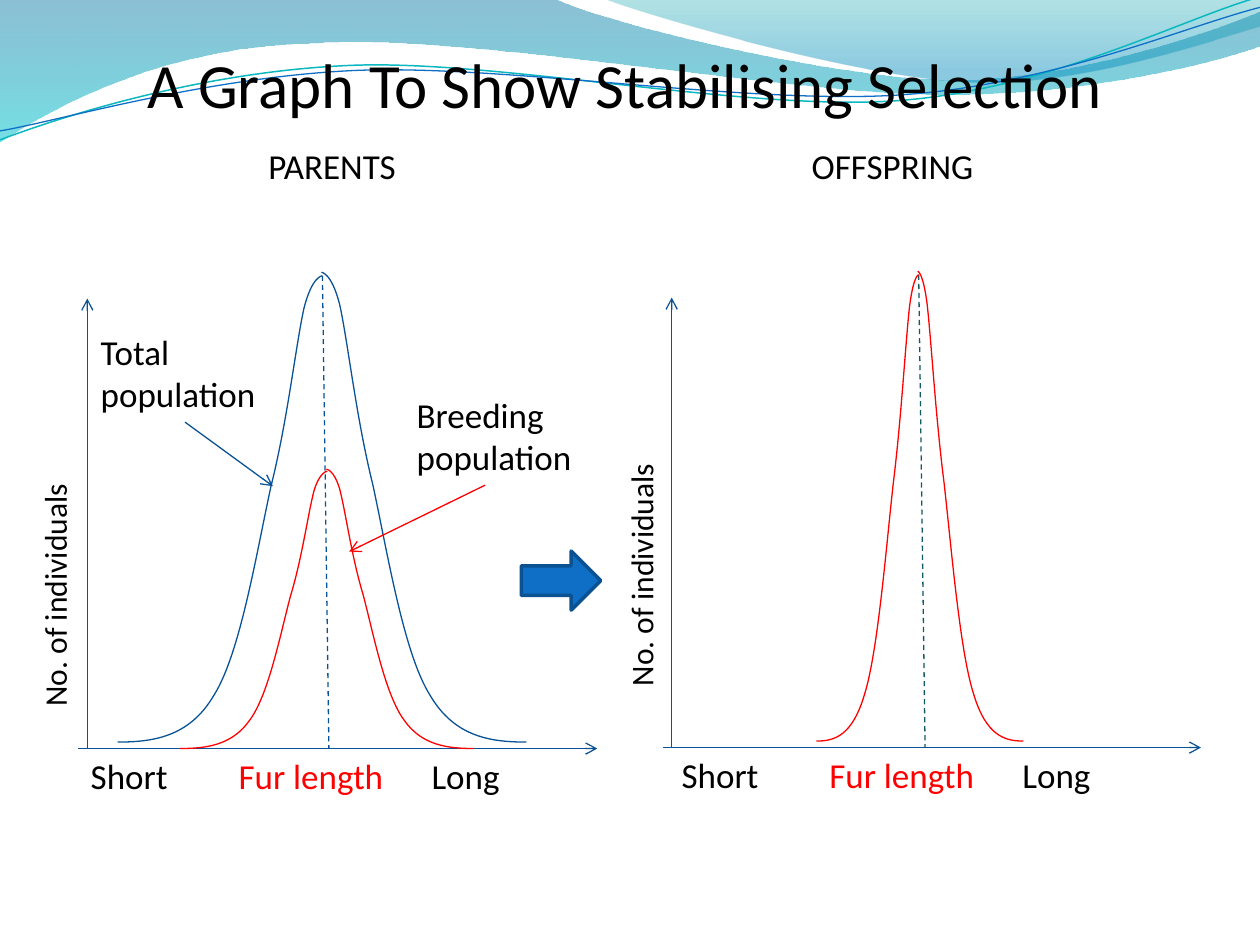
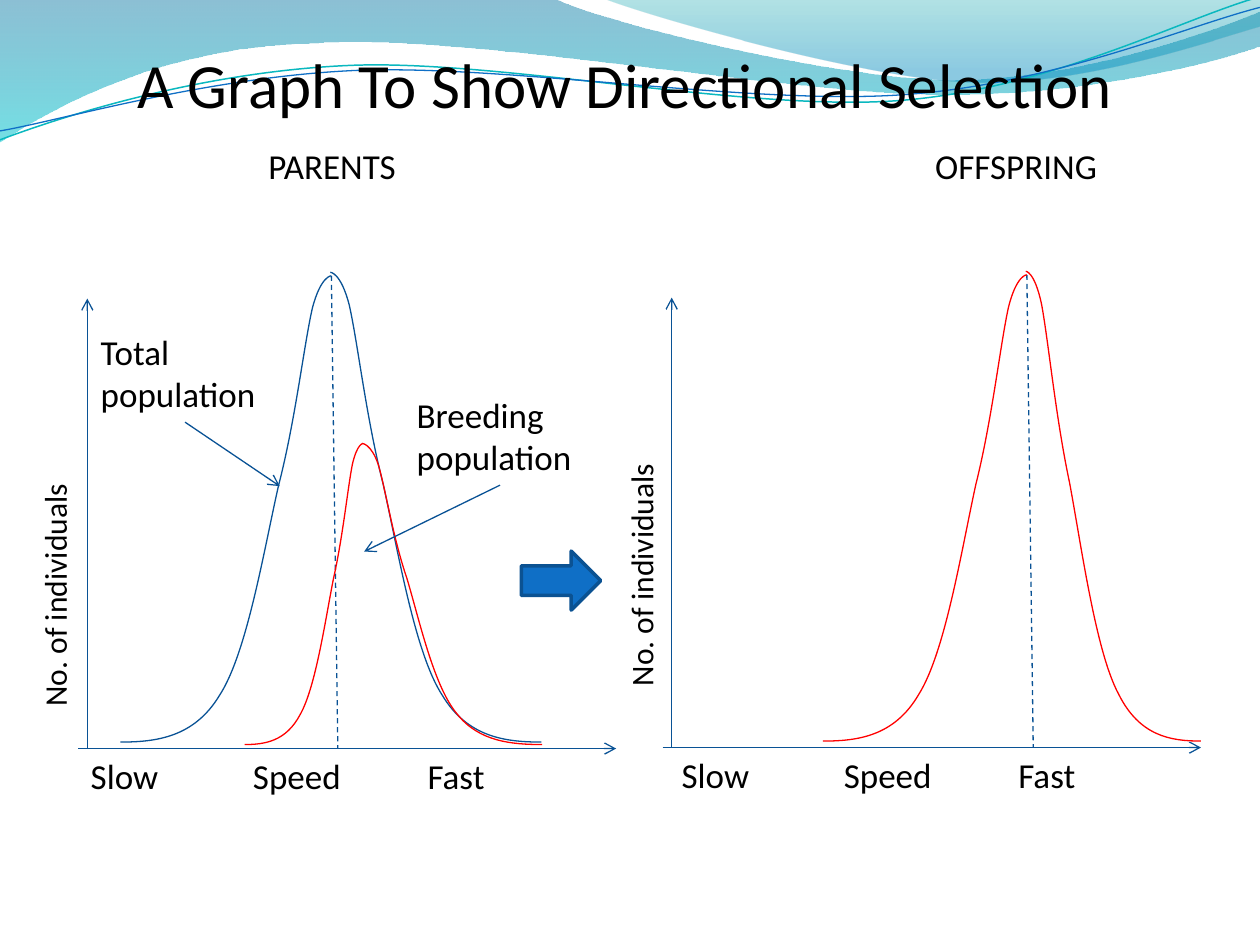
import lxml.etree
import pptx
import pptx.dml.color
import pptx.enum.dml
import pptx.enum.shapes
import pptx.enum.text
import pptx.oxml.ns
import pptx.util

FONT = "Calibri"
BLACK, RED, NAVY, BLUE = "000000", "FF0000", "095295", "0F6FC6"
THIN = 0.75
BELL = [
    [(0.17, 0), (0.35, 0.01), (0.47, 0.1)],
    [(0.6, 0.19), (0.68, 0.41), (0.75, 0.55)],
    [(0.83, 0.69), (0.87, 0.85), (0.91, 0.93)],
    [(0.95, 1), (1, 1), (1, 1)],
]
BANDS = [
    ((0, 0), [
        [(11.18, -0.03)],
        [(12.09, 0.43), (16.87, 1.6), (19.25, 1.6)],
        [(21.67, 1.6), (24.33, 0.66), (25.4, 0.23)],
        [(25.43, 0.91)],
        [(24.97, 1.12), (22.1, 1.93), (18.95, 1.9)],
        [(15.8, 1.9), (9.7, 0.71), (6.53, 0.86)],
        [(3.28, 0.91), (1.17, 2.11), (-0.03, 2.87)],
    ], [(0, "0074A1", 45), (1, "00C6CF", 55)]),
    ((12.17, -0.03), [
        [(12.93, 0.28), (17.32, 1.57), (19.53, 1.65)],
        [(21.74, 1.75), (24.41, 0.81), (25.4, 0.53)],
        [(25.4, 0)],
    ], [(0, "00A1A9", 30), (0.8, "008BBF", 45)]),
]
WAVES = [
    ((0, 2.82), [
        [(1.22, 2.36), (4.01, 1.45), (7.04, 1.32)],
        [(10.03, 1.19), (15.06, 2.26), (18.11, 2.03)],
        [(21.16, 1.8), (23.83, 0.38), (25.35, -0.05)],
    ], "0AB8BF", 0.85),
    ((0, 2.64), [
        [(1.19, 2.44), (4.17, 1.55), (7.19, 1.42)],
        [(10.24, 1.3), (15.16, 2.13), (18.21, 1.91)],
        [(21.23, 1.7), (23.9, 0.53), (25.4, 0.15)],
    ], BLUE, THIN),
]


def tint(code):
    """Turn a hex string into a colour."""
    return pptx.dml.color.RGBColor.from_string(code)


def node(parent, tag, **attrs):
    """Add a DrawingML child element."""
    return lxml.etree.SubElement(parent, pptx.oxml.ns.qn(tag), **attrs)


def place(*sizes):
    """Turn centimetres into lengths."""
    return [pptx.util.Cm(size) for size in sizes]


def outline(slide, start, parts, close=False):
    """Draw a freeform whose parts are lines (1 point) or cubics (3 points)."""
    pen = slide.shapes.build_freeform(*place(*start))
    pen.add_line_segments([place(*point) for part in parts for point in part],
                          close=close)
    shape = pen.convert_to_shape()
    shape.shadow.inherit = False
    steps = iter(list(shape.element.iter(pptx.oxml.ns.qn("a:lnTo"))))
    for part in parts:
        first, *rest = [next(steps) for _ in part]
        if rest:
            curve = lxml.etree.Element(pptx.oxml.ns.qn("a:cubicBezTo"))
            first.addprevious(curve)
            for step in (first, *rest):
                curve.append(step[0])
                step.getparent().remove(step)
    return shape


def stroke(slide, start, parts, color, width=THIN):
    """Draw an open curve."""
    shape = outline(slide, start, parts)
    shape.fill.background()
    shape.line.color.rgb = tint(color)
    shape.line.width = pptx.util.Pt(width)
    return shape


def band(slide, start, parts, stops):
    """Draw a see-through band that fades downwards."""
    shape = outline(slide, start, parts, close=True)
    shape.line.fill.background()
    shape.fill.gradient()
    shape.fill.gradient_angle = 270
    for stop, (spot, color, _) in zip(shape.fill.gradient_stops, stops):
        stop.position = spot
        stop.color.rgb = tint(color)
    colors = shape.element.spPr.iter(pptx.oxml.ns.qn("a:srgbClr"))
    for mark, (_, _, alpha) in zip(list(colors), stops):
        node(mark, "a:alpha", val=str(alpha * 1000))
    return shape


def header(slide, layout):
    """Put the bands and waves on the shared layout."""
    for spare in list(layout.placeholders)[1:]:
        layout.shapes.element.remove(spare.element)
    shapes = [band(slide, *item) for item in BANDS]
    shapes += [stroke(slide, *item) for item in WAVES]
    for index, shape in enumerate(shapes):
        layout.shapes.element.insert(2 + index, shape.element)


def line(slide, start, end, color=NAVY, dashed=False):
    """Draw an arrow, or a dashed line without a head."""
    kind = pptx.enum.shapes.MSO_CONNECTOR.STRAIGHT
    link = slide.shapes.add_connector(kind, *place(*start, *end))
    link.line.color.rgb = tint(color)
    link.line.width = pptx.util.Pt(THIN)
    if dashed:
        link.line.dash_style = pptx.enum.dml.MSO_LINE.DASH
    else:
        node(link.line._get_or_add_ln(), "a:tailEnd", type="arrow")
    node(link.element.spPr, "a:effectLst")


def style(run, size, color=BLACK):
    """Format one run."""
    run.font.name = FONT
    run.font.size = pptx.util.Pt(size)
    run.font.color.rgb = tint(color)


def label(slide, box, text, size=20, center=False, upright=False):
    """Add a text box with one paragraph."""
    frame = slide.shapes.add_textbox(*place(*box)).text_frame
    frame.word_wrap = True
    frame.text = text
    para = frame.paragraphs[0]
    if center:
        para.alignment = pptx.enum.text.PP_ALIGN.CENTER
    if upright:
        frame._txBody.bodyPr.set("vert", "vert270")
    for run in para.runs:
        style(run, size)
    return para


def scale(slide, left, top, words, tabs, accent):
    """Write the three words below an axis at tab stops."""
    para = label(slide, (left, top, 10.44, 1.12), words[0])
    stops = node(para._p.get_or_add_pPr(), "a:tabLst")
    for tab in tabs:
        node(stops, "a:tab", pos=str(pptx.util.Cm(tab)), algn="l")
    for word, color in zip(words[1:], (accent, BLACK)):
        run = para.add_run()
        run.text = "\t" + word
        style(run, 20, color)


def bell(slide, peak, foot, height, widths, color, lift=0.07):
    """Draw both halves of a bell curve, each from its foot to the peak."""
    left, right = widths
    halves = [(peak, -left, height), (peak - 0.02, right, height + lift)]
    for top, reach, rise in halves:
        parts = [[(top + reach * (1 - x), foot - rise * y) for x, y in part]
                 for part in BELL]
        stroke(slide, (top + reach, foot), parts, color)


def graph(slide, left, base, width, peak, widths, color, mean):
    """Draw the axes, the mean line and the main curve."""
    line(slide, (left, base), (left, base - 9.07))
    line(slide, (left - 0.18, base), (left + width, base))
    line(slide, (left + peak, base - 9.53), (left + peak + 0.13, base),
         mean, dashed=True)
    bell(slide, left + peak, base - 0.13, 9.4, widths, color)


def parents(slide, left, base, data):
    """Build the graph of the parents with its two labelled curves."""
    graph(slide, left, base, data["width"], data["peak"],
          (4.13 * data["stretch"],) * 2, NAVY, NAVY)
    peak, drop, height, widths, lift = data["breed"]
    bell(slide, left + peak, base - drop, height, widths, RED, lift)
    label(slide, (left + 1.62, 2.78, 6.63, 1.12), "PARENTS", center=True)
    label(slide, (left + 0.02, base - 8.56, 3.89, 1.96), "Total population")
    label(slide, (left + 6.39, base - 7.29, 3.89, 1.96), "Breeding population")
    line(slide, (left + 1.97, base - 6.58), (left + data["total"], base - 5.29))
    tip = left + data["tip"]
    line(slide, (tip + 2.74, base - 5.31), (tip, base - 3.97), data["color"])
    label(slide, (left - 1.17, base - 6.75, 1.27, 6.15), "No. of individuals",
          18, upright=True)
    scale(slide, left - 0.18, base, data["words"], data["tabs"], data["accent"])


def offspring(slide, left, base, data):
    """Build the graph of the offspring."""
    graph(slide, left, base, 10.67, data["child"], data["spread"], RED, data["mean"])
    label(slide, (left + data["head"], 2.78, 6.63, 1.12), "OFFSPRING", center=True)
    label(slide, (left - 1.13, base - 7.14, 1.27, 6.15), "No. of individuals",
          18, upright=True)
    scale(slide, left - 0.05, base, data["words"], data["tabs"], data["accent"])


def arrow(slide, box):
    """Draw the block arrow between the graphs."""
    kind = pptx.enum.shapes.MSO_SHAPE.RIGHT_ARROW
    shape = slide.shapes.add_shape(kind, *place(*box))
    shape.shadow.inherit = False
    shape.fill.solid()
    shape.fill.fore_color.rgb = tint(BLUE)
    shape.line.color.rgb = tint("0B5292")
    shape.line.width = pptx.util.Pt(2)


def title(slide, text):
    """Fill the title placeholder."""
    shape = slide.shapes.title
    shape.left, shape.top, shape.width, shape.height = place(0.6, 0.79, 24, 1.8)
    frame = shape.text_frame
    frame.text = text
    frame.word_wrap = True
    frame.auto_size = pptx.enum.text.MSO_AUTO_SIZE.NONE
    frame.vertical_anchor = pptx.enum.text.MSO_ANCHOR.TOP
    frame.paragraphs[0].alignment = pptx.enum.text.PP_ALIGN.CENTER
    style(frame.paragraphs[0].runs[0], 36)


def page(deck, layout, data):
    """Build one slide that compares parents and offspring."""
    slide = deck.slides.add_slide(layout)
    title(slide, data["title"])
    parents(slide, 1.76, 15.09, data)
    offspring(slide, 13.54, 15.07, data)
    arrow(slide, (10.51, 11.11, 1.6, 1.19))
    return slide


PAGES = [
    {"title": "A Graph To Show Stabilising Selection",
     "words": ("Short", "Fur length", "Long"), "tabs": (2.98, 6.87), "accent": RED,
     "width": 10.28, "peak": 4.74, "stretch": 1,
     "breed": (4.84, 0, 5.59, (2.97, 2.97), 0.04),
     "total": 3.74, "tip": 5.28, "color": RED,
     "child": 4.98, "spread": (2.06, 2.13), "mean": "115964", "head": 1.14},
    {"title": "A Graph To Show Directional Selection",
     "words": ("Slow", "Speed", "Fast"), "tabs": (3.27, 6.79), "accent": BLACK,
     "width": 10.66, "peak": 4.92, "stretch": 1.03,
     "breed": (5.56, 0.08, 6.07, (2.39, 3.63), 0),
     "total": 3.88, "tip": 5.58, "color": NAVY,
     "child": 7.16, "spread": (4.11, 3.53), "mean": NAVY, "head": 3.63},
]


def main():
    """Build and save the deck."""
    deck = pptx.Presentation()
    deck.slide_width, deck.slide_height = place(25.4, 19.05)
    layout = deck.slide_layouts[5]
    slides = [page(deck, layout, data) for data in PAGES]
    header(slides[0], layout)
    deck.save("out.pptx")


if __name__ == "__main__":
    main()
